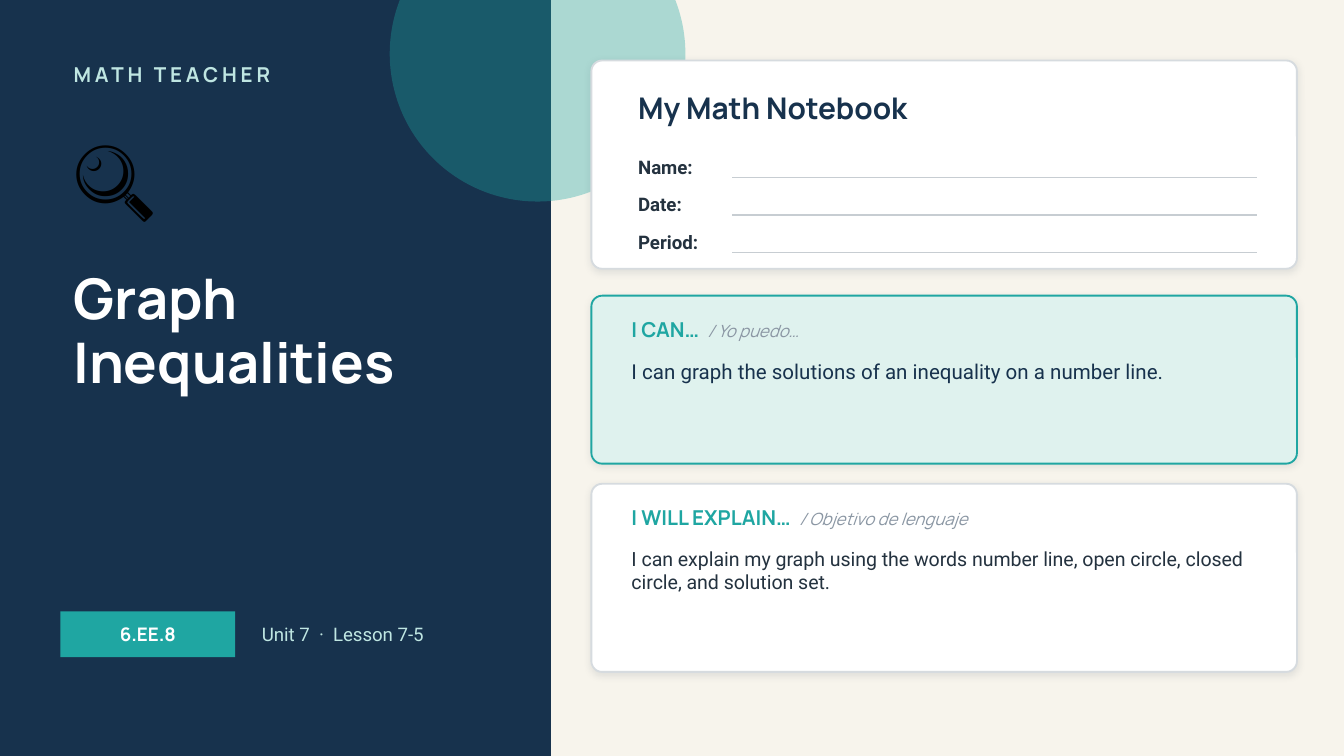
from dataclasses import dataclass
from lxml.etree import SubElement
from pptx import Presentation
from pptx.dml.color import RGBColor
from pptx.enum.shapes import MSO_CONNECTOR, MSO_SHAPE
from pptx.enum.text import MSO_ANCHOR, PP_ALIGN
from pptx.oxml.ns import qn
from pptx.util import Pt

PX = 4572


@dataclass(frozen=True)
class Theme:
    navy: str = "17324D"
    teal: str = "1FA6A2"
    mint: str = "BFE6E2"
    pale: str = "DFF2EE"
    cream: str = "F7F4EC"
    white: str = "FFFFFF"
    black: str = "000000"
    ink: str = "24323F"
    gray: str = "8A96A3"
    edge: str = "D6DBDF"
    rule: str = "C7CDD2"
    shade: str = "1C2E42"
    head: str = "Manrope"
    body: str = "Roboto"
    icon: str = "Calibri"
    huge: float = 44
    title: float = 30
    name: float = 16
    lead: float = 11
    text: float = 10.5
    small: float = 10
    note: float = 9


T = Theme()
SIZE = (2000, 1125)
SIDE = [
    ("MATH TEACHER", (90, 80, 660, 60),
     dict(size=T.lead, color=T.mint, font=T.head, bold=True, track=200)),
    ("🔍", (90, 170, 300, 180), dict(size=T.huge, color=T.black, font=T.icon)),
    ("Graph Inequalities", (90, 390, 660, 340),
     dict(size=T.title, color=T.white, font=T.head, bold=True, top=True, lead=0.95)),
    ("Unit 7  ·  Lesson 7-5", (370, 910, 420, 68), dict(color=T.mint)),
]
CODE = "6.EE.8"
BOOK = "My Math Notebook"
FIELDS = ["Name:", "Date:", "Period:"]
GOALS = [
    dict(y=440, h=250, fill=T.pale, edge=T.teal, head="I CAN…  ", note="/ Yo puedo…",
         text="I can graph the solutions of an inequality on a number line.",
         size=T.lead, color=T.navy),
    dict(y=720, h=280, fill=T.white, edge=T.edge, head="I WILL EXPLAIN…  ",
         note="/ Objetivo de lenguaje",
         text="I can explain my graph using the words number line, open circle, "
              "closed circle, and solution set.",
         size=T.text, color=T.ink),
]
LEFT, WIDE = 880, 1050

deck = Presentation()
deck.slide_width, deck.slide_height = (n * PX for n in SIZE)
slide = deck.slides.add_slide(deck.slide_layouts[6])
slide.background.fill.solid()
slide.background.fill.fore_color.rgb = RGBColor.from_string(T.cream)


def emu(box):
    """Turn px lengths into EMU."""
    return [n * PX for n in box]


def write(text, box=None, shape=None, size=T.small, color=T.ink, font=T.body, bold=False,
          italic=False, track=0, top=False, lead=None, center=False):
    """Add a run to a shape, or to a new text box, and return the shape."""
    shape = shape or slide.shapes.add_textbox(*emu(box))
    frame = shape.text_frame
    frame.word_wrap = True
    frame.vertical_anchor = MSO_ANCHOR.TOP if top else MSO_ANCHOR.MIDDLE
    para = frame.paragraphs[0]
    para.alignment = PP_ALIGN.CENTER if center else PP_ALIGN.LEFT
    if lead:
        para.line_spacing = lead
    run = para.add_run()
    run.text = text
    face = run.font
    face.size, face.name, face.bold, face.italic = Pt(size), font, bold, italic
    face.color.rgb = RGBColor.from_string(color)
    if track:
        run._r.get_or_add_rPr().set("spc", str(track))
    return shape


def draw(kind, box, fill, edge=None):
    """Add a filled preset shape."""
    shape = slide.shapes.add_shape(kind, *emu(box))
    shape.shadow.inherit = False
    shape.fill.solid()
    shape.fill.fore_color.rgb = RGBColor.from_string(fill)
    if edge:
        shape.line.color.rgb = RGBColor.from_string(edge)
        shape.line.width = Pt(1)
    else:
        shape.line.fill.background()
    return shape


def fade(color, part):
    """Set the opacity of a colour element in percent."""
    SubElement(color, qn("a:alpha"), val=str(part * 1000))


def card(y, h, fill, edge):
    """Add a rounded card with a soft shadow."""
    shape = draw(MSO_SHAPE.ROUNDED_RECTANGLE, (LEFT, y, WIDE, h), fill, edge)
    shape.adjustments[0] = 16 / h
    glow = SubElement(shape._element.spPr.find(qn("a:effectLst")), qn("a:outerShdw"),
                      blurRad=str(Pt(4)), dist=str(Pt(1)), dir="5400000",
                      algn="bl", rotWithShape="0")
    fade(SubElement(glow, qn("a:srgbClr"), val=T.shade), 10)


def rule(x, y, end):
    """Add a thin writing line."""
    line = slide.shapes.add_connector(MSO_CONNECTOR.STRAIGHT, *emu((x, y, end, y)))
    line.line.color.rgb = RGBColor.from_string(T.rule)
    line.line.width = Pt(0.75)
    SubElement(line._element.spPr, qn("a:effectLst"))


draw(MSO_SHAPE.RECTANGLE, (0, 0, 820, SIZE[1]), T.navy)
disc = draw(MSO_SHAPE.OVAL, (580, -140, 440, 440), T.teal)
fade(disc._element.spPr.find(qn("a:solidFill"))[0], 35)
for text, box, style in SIDE:
    write(text, box, **style)
badge = draw(MSO_SHAPE.RECTANGLE, (90, 910, 260, 68), T.teal)
write(CODE, shape=badge, color=T.white, font=T.head, bold=True, center=True)

card(90, 310, T.white, T.edge)
write(BOOK, (LEFT + 50, 120, 960, 80), size=T.name, color=T.navy, font=T.head, bold=True)
for i, label in enumerate(FIELDS):
    y = 224 + 56 * i
    write(label, (LEFT + 50, y, 160, 48), bold=True)
    rule(LEFT + 210, y + 40, LEFT + 990)

for goal in GOALS:
    y, h = goal["y"], goal["h"]
    card(y, h, goal["fill"], goal["edge"])
    head = write(goal["head"], (LEFT + 40, y + 20, 970, 60), size=T.lead, color=T.teal,
                 font=T.head, bold=True)
    write(goal["note"], shape=head, size=T.note, color=T.gray, font=T.head, italic=True)
    write(goal["text"], (LEFT + 40, y + 84, 970, h - 95), size=goal["size"],
          color=goal["color"], top=True)

deck.save("out.pptx")
